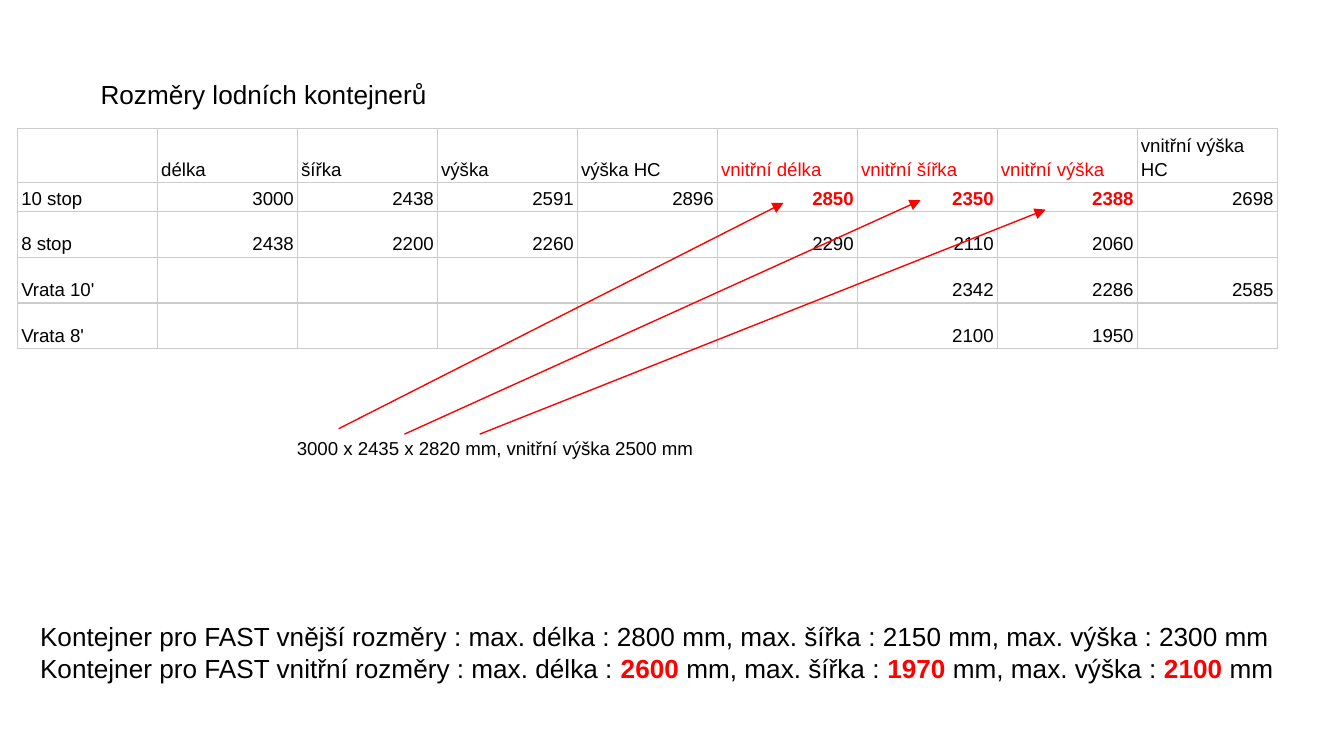
from lxml.etree import SubElement
from pptx import Presentation
from pptx.dml.color import RGBColor
from pptx.enum.shapes import MSO_CONNECTOR
from pptx.enum.text import MSO_ANCHOR, MSO_AUTO_SIZE, PP_ALIGN
from pptx.oxml import parse_xml
from pptx.oxml.ns import nsdecls, qn
from pptx.util import Pt

COLORS = {"text": "000000", "mark": "FF0000", "grid": "CCCCCC"}
FONT = "Arial"

SIZES = [
    ["", "délka", "šířka", "výška", "výška HC", "vnitřní délka",
     "vnitřní šířka", "vnitřní výška", "vnitřní výška HC"],
    ["10 stop", "3000", "2438", "2591", "2896", "2850", "2350", "2388", "2698"],
    ["8 stop", "2438", "2200", "2260", "", "2290", "2110", "2060", ""],
    ["Vrata 10'", "", "", "", "", "", "2342", "2286", "2585"],
    ["Vrata 8'", "", "", "", "", "", "2100", "1950", ""],
]
HEIGHTS = [28.95, 15.5, 23.25, 23.25, 23.25]
WIDTH = 75
INNER = range(5, 8)

NOTES = [
    ((46.8, 34.6, 617, 31.7), 14, [[("Rozměry lodních kontejnerů", False)]]),
    ((151.9, 228.2, 430, 26.6), 10,
     [[("3000 x 2435 x 2820 mm, vnitřní výška 2500 mm", False)]]),
    ((14.4, 325.4, 705.6, 48.2), 14, [
        [("Kontejner pro FAST vnější rozměry : max. délka : 2800 mm, "
          "max. šířka : 2150 mm, max. výška : 2300 mm", False)],
        [("Kontejner pro FAST vnitřní rozměry : max. délka : ", False),
         ("2600", True), (" mm, max. šířka : ", False),
         ("1970", True), (" mm, max. výška : ", False),
         ("2100", True), (" mm", False)],
    ]),
]
ARROWS = [
    ((181.4, 229.7), (419.8, 108.7)),
    ((216.7, 232.6), (493.2, 107.3)),
    ((257, 232.6), (560.2, 112.3)),
]


def add_run(para, text, size, color="text", bold=False):
    run = para.add_run()
    run.text = text
    run.font.name = FONT
    run.font.size = Pt(size)
    run.font.bold = bold
    run.font.color.rgb = RGBColor.from_string(COLORS[color])


def add_grid(cell):
    props = cell._tc.get_or_add_tcPr()
    for place, side in enumerate(("lnL", "lnR", "lnT", "lnB")):
        props.insert(place, parse_xml(
            f'<a:{side} {nsdecls("a")} w="{Pt(0.75)}"><a:solidFill>'
            f'<a:srgbClr val="{COLORS["grid"]}"/></a:solidFill></a:{side}>'))


def add_sizes(slide):
    cols = len(SIZES[0])
    frame = slide.shapes.add_table(len(SIZES), cols, Pt(9.4), Pt(68.9),
                                   Pt(WIDTH * cols), Pt(sum(HEIGHTS)))
    table = frame.table
    table.first_row = table.horz_banding = False
    for col in table.columns:
        col.width = Pt(WIDTH)
    for r, (height, values) in enumerate(zip(HEIGHTS, SIZES)):
        table.rows[r].height = Pt(height)
        for c, value in enumerate(values):
            cell = table.cell(r, c)
            cell.fill.background()
            add_grid(cell)
            cell.vertical_anchor = MSO_ANCHOR.BOTTOM
            cell.margin_left = cell.margin_right = Pt(2)
            cell.margin_top = cell.margin_bottom = Pt(1.25)
            if value:
                para = cell.text_frame.paragraphs[0]
                para.line_spacing = 1.15
                para.alignment = PP_ALIGN.RIGHT if r and c else PP_ALIGN.LEFT
                marked = r < 2 and c in INNER
                add_run(para, value, 10, "mark" if marked else "text",
                        marked and r == 1)


def add_note(slide, box, size, lines):
    frame = slide.shapes.add_textbox(*map(Pt, box)).text_frame
    frame.word_wrap = True
    frame.auto_size = MSO_AUTO_SIZE.SHAPE_TO_FIT_TEXT
    frame.margin_left = frame.margin_right = Pt(7.2)
    frame.margin_top = frame.margin_bottom = Pt(7.2)
    for i, line in enumerate(lines):
        para = frame.add_paragraph() if i else frame.paragraphs[0]
        for text, marked in line:
            add_run(para, text, size, "mark" if marked else "text", marked)


def add_arrow(slide, start, end):
    arrow = slide.shapes.add_connector(MSO_CONNECTOR.STRAIGHT,
                                       *map(Pt, start + end))
    arrow.line.color.rgb = RGBColor.from_string(COLORS["mark"])
    arrow.line.width = Pt(0.75)
    props = arrow._element.spPr
    SubElement(props.find(qn("a:ln")), qn("a:tailEnd"), type="triangle",
               w="med", len="med")
    SubElement(props, qn("a:effectLst"))


def main():
    deck = Presentation()
    deck.slide_width, deck.slide_height = Pt(720), Pt(405)
    slide = deck.slides.add_slide(deck.slide_layouts[6])
    add_sizes(slide)
    title, outer, limits = NOTES
    add_note(slide, *title)
    add_note(slide, *outer)
    for start, end in ARROWS:
        add_arrow(slide, start, end)
    add_note(slide, *limits)
    deck.save("out.pptx")


if __name__ == "__main__":
    main()
